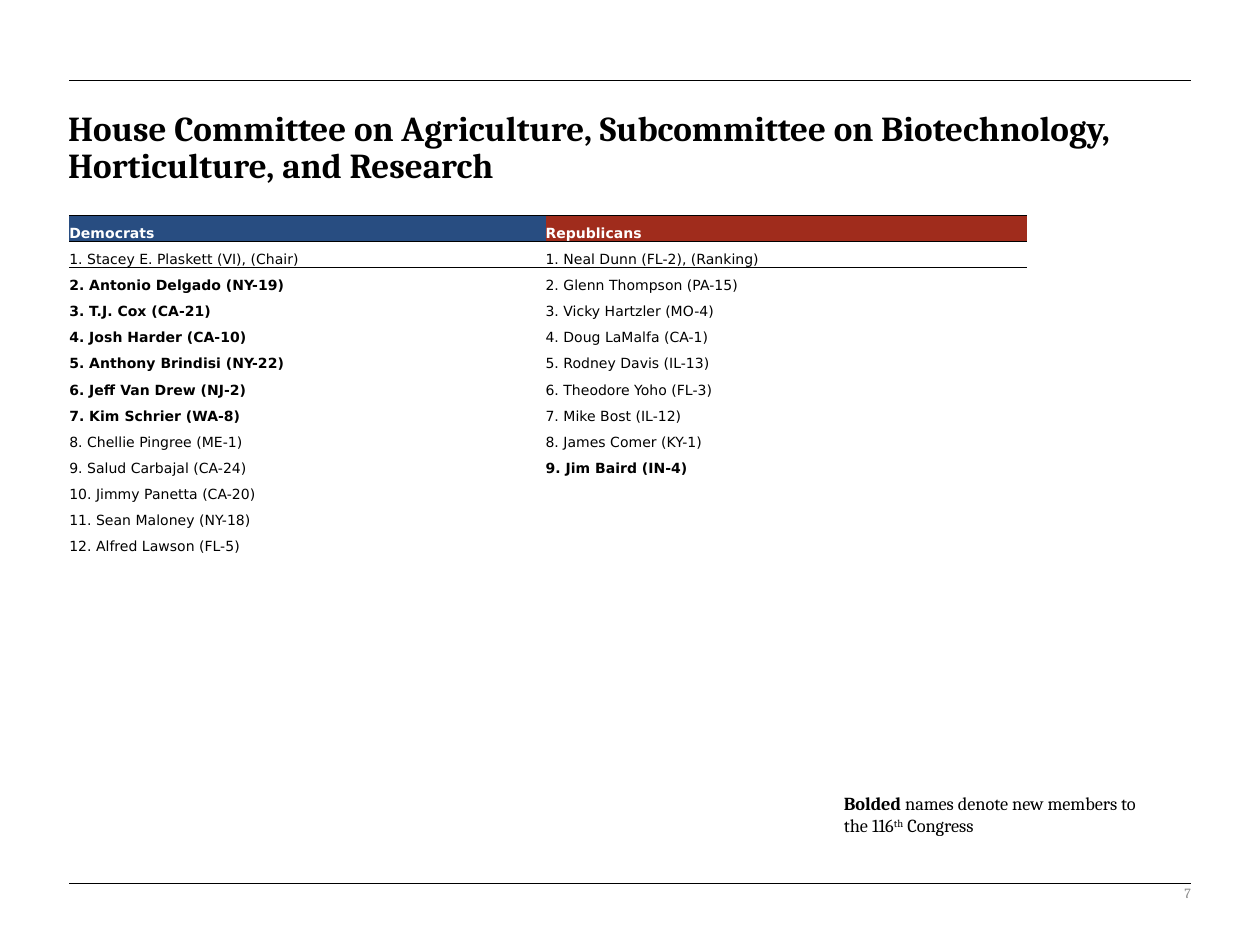
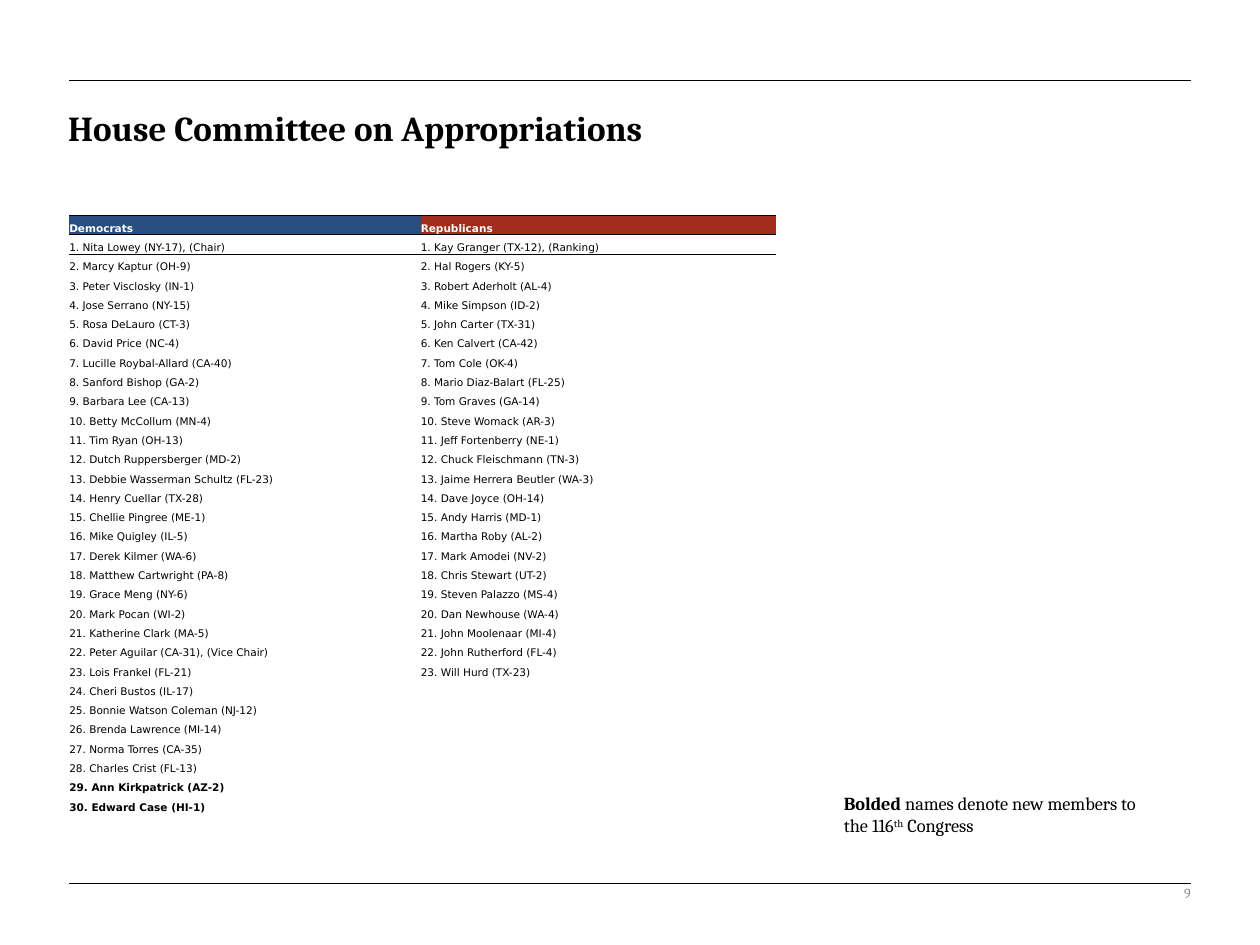
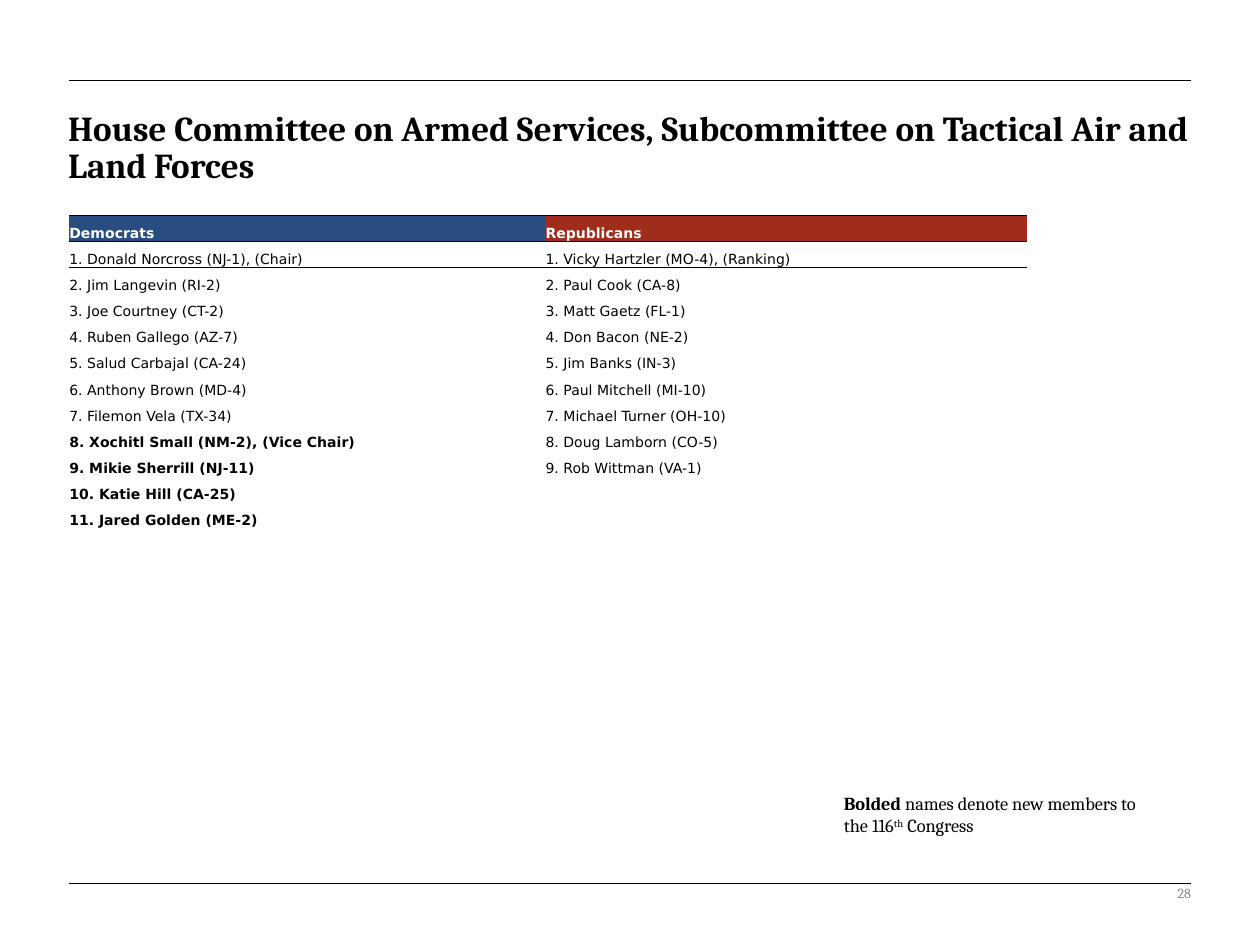
from dataclasses import dataclass

from lxml import etree
from pptx import Presentation
from pptx import util as u
from pptx.dml.color import RGBColor
from pptx.enum import shapes, text
from pptx.oxml.ns import qn

# Shared look
SERIF, SANS = "Cambria", "DejaVu Sans"
BLACK, WHITE, GRAY = "000000", "FFFFFF", "8C8C8C"
BLUE, RED = "284D81", "A02C1C"
HEADS = (("Democrats", BLUE), ("Republicans", RED))
PLAIN = "{2D5ABB26-0587-4C30-8999-92F81FD0307C}"
WIDE, HIGH = u.Inches(10), u.Inches(7.5)

# Places as percent of the slide: left, top, width, height
TITLE = (4.4, 11.07, 92, 9.33)
NOTE = (66, 83.2, 27, 6)
NUMBER = (70.6, 91.87, 24.9, 5.33)
RULES = (93.47, 8.53)
LEFT, RIGHT, TOP = 5.5, 94.5, 22.8


@dataclass
class Roster:
    """One committee; a star marks a new member."""
    page: int
    title: str
    dems: str
    reps: str
    cols: tuple[float, float] = (37.8, 38.2)
    size: float = 8
    pitch: float = 14.95


ROSTERS = [
    Roster(
        7,
        "House Committee on Agriculture, Subcommittee on Biotechnology, "
        "Horticulture, and Research",
        """Stacey E. Plaskett (VI), (Chair)
*Antonio Delgado (NY-19)
*T.J. Cox (CA-21)
*Josh Harder (CA-10)
*Anthony Brindisi (NY-22)
*Jeff Van Drew (NJ-2)
*Kim Schrier (WA-8)
Chellie Pingree (ME-1)
Salud Carbajal (CA-24)
Jimmy Panetta (CA-20)
Sean Maloney (NY-18)
Alfred Lawson (FL-5)""",
        """Neal Dunn (FL-2), (Ranking)
Glenn Thompson (PA-15)
Vicky Hartzler (MO-4)
Doug LaMalfa (CA-1)
Rodney Davis (IL-13)
Theodore Yoho (FL-3)
Mike Bost (IL-12)
James Comer (KY-1)
*Jim Baird (IN-4)"""),
    Roster(
        9,
        "House Committee on Appropriations",
        """Nita Lowey (NY-17), (Chair)
Marcy Kaptur (OH-9)
Peter Visclosky (IN-1)
Jose Serrano (NY-15)
Rosa DeLauro (CT-3)
David Price (NC-4)
Lucille Roybal-Allard (CA-40)
Sanford Bishop (GA-2)
Barbara Lee (CA-13)
Betty McCollum (MN-4)
Tim Ryan (OH-13)
Dutch Ruppersberger (MD-2)
Debbie Wasserman Schultz (FL-23)
Henry Cuellar (TX-28)
Chellie Pingree (ME-1)
Mike Quigley (IL-5)
Derek Kilmer (WA-6)
Matthew Cartwright (PA-8)
Grace Meng (NY-6)
Mark Pocan (WI-2)
Katherine Clark (MA-5)
Peter Aguilar (CA-31), (Vice Chair)
Lois Frankel (FL-21)
Cheri Bustos (IL-17)
Bonnie Watson Coleman (NJ-12)
Brenda Lawrence (MI-14)
Norma Torres (CA-35)
Charles Crist (FL-13)
*Ann Kirkpatrick (AZ-2)
*Edward Case (HI-1)""",
        """Kay Granger (TX-12), (Ranking)
Hal Rogers (KY-5)
Robert Aderholt (AL-4)
Mike Simpson (ID-2)
John Carter (TX-31)
Ken Calvert (CA-42)
Tom Cole (OK-4)
Mario Diaz-Balart (FL-25)
Tom Graves (GA-14)
Steve Womack (AR-3)
Jeff Fortenberry (NE-1)
Chuck Fleischmann (TN-3)
Jaime Herrera Beutler (WA-3)
Dave Joyce (OH-14)
Andy Harris (MD-1)
Martha Roby (AL-2)
Mark Amodei (NV-2)
Chris Stewart (UT-2)
Steven Palazzo (MS-4)
Dan Newhouse (WA-4)
John Moolenaar (MI-4)
John Rutherford (FL-4)
Will Hurd (TX-23)""",
        cols=(27.9, 28.2), size=6, pitch=11.05),
    Roster(
        28,
        "House Committee on Armed Services, Subcommittee on Tactical Air "
        "and Land Forces",
        """Donald Norcross (NJ-1), (Chair)
Jim Langevin (RI-2)
Joe Courtney (CT-2)
Ruben Gallego (AZ-7)
Salud Carbajal (CA-24)
Anthony Brown (MD-4)
Filemon Vela (TX-34)
*Xochitl Small (NM-2), (Vice Chair)
*Mikie Sherrill (NJ-11)
*Katie Hill (CA-25)
*Jared Golden (ME-2)""",
        """Vicky Hartzler (MO-4), (Ranking)
Paul Cook (CA-8)
Matt Gaetz (FL-1)
Don Bacon (NE-2)
Jim Banks (IN-3)
Paul Mitchell (MI-10)
Michael Turner (OH-10)
Doug Lamborn (CO-5)
Rob Wittman (VA-1)"""),
]


# Helpers
def across(part: float) -> int:
    return round(WIDE * part / 100)


def down(part: float) -> int:
    return round(HIGH * part / 100)


def area(spot: tuple) -> tuple:
    x, y, w, h = spot
    return across(x), down(y), across(w), down(h)


def paint(fill, tone: str) -> None:
    fill.solid()
    fill.fore_color.rgb = RGBColor.from_string(tone)


def put(para, words: str, *, size: float, face: str = SERIF,
        tone: str = BLACK, bold: bool = False, base: int = 0) -> None:
    """Add one run to a paragraph."""
    run = para.add_run()
    run.text = words
    font = run.font
    font.size, font.name, font.bold = u.Pt(size), face, bold
    paint(font.fill, tone)
    if base:
        font._element.set("baseline", str(base * 1000))


def edge(cell, *sides: str) -> None:
    props = cell._tc.get_or_add_tcPr()
    for side in sides:
        line = etree.SubElement(props, qn(f"a:ln{side}"), w=str(u.Pt(0.5)))
        fill = etree.SubElement(line, qn("a:solidFill"))
        etree.SubElement(fill, qn("a:srgbClr"), val=BLACK)


# Parts of a slide
def rule(slide, y: float) -> None:
    line = slide.shapes.add_connector(
        shapes.MSO_CONNECTOR.STRAIGHT,
        across(LEFT), down(y), across(RIGHT), down(y))
    paint(line.line.fill, BLACK)
    line.line.width = u.Pt(0.5)
    etree.SubElement(line._element.spPr, qn("a:effectLst"))


def label(slide, spot: tuple):
    frame = slide.shapes.add_textbox(*area(spot)).text_frame
    frame.word_wrap = True
    return frame


def number(slide, page: int) -> None:
    frame = label(slide, NUMBER)
    frame.vertical_anchor = text.MSO_ANCHOR.MIDDLE
    para = frame.paragraphs[0]
    para.alignment = text.PP_ALIGN.RIGHT
    put(para, str(page), size=8, tone=GRAY)


def head(slide, words: str) -> None:
    title = slide.shapes.title
    title.left, title.top, title.width, title.height = area(TITLE)
    frame = title.text_frame
    frame.auto_size = text.MSO_AUTO_SIZE.NONE
    frame.vertical_anchor = text.MSO_ANCHOR.TOP
    para = frame.paragraphs[0]
    para.alignment, para.line_spacing = text.PP_ALIGN.LEFT, 0.9
    put(para, words, size=20, bold=True)


def note(slide) -> None:
    frame = label(slide, NOTE)
    frame.auto_size = text.MSO_AUTO_SIZE.SHAPE_TO_FIT_TEXT
    para = frame.paragraphs[0]
    put(para, "Bolded ", size=10.5, bold=True)
    put(para, "names denote new members to the 116", size=10.5)
    put(para, "th", size=10.5, base=30)
    put(para, " Congress", size=10.5)


def grid(slide, data: Roster) -> None:
    sides = [data.dems.splitlines(), data.reps.splitlines()]
    count = 1 + max(map(len, sides))
    pitch = u.Pt(data.pitch)
    shape = slide.shapes.add_table(
        count, 2, across(LEFT), down(TOP), across(sum(data.cols)),
        pitch * count)
    for style in shape._element.iter(qn("a:tableStyleId")):
        style.text = PLAIN
    table = shape.table
    table.first_row = table.horz_banding = False
    for row in table.rows:
        row.height = pitch
    for col, (names, (party, tone)) in enumerate(zip(sides, HEADS)):
        table.columns[col].width = across(data.cols[col])
        for row in range(count):
            cell = table.cell(row, col)
            cell.margin_left = cell.margin_right = 0
            cell.margin_top = cell.margin_bottom = 0
            cell.vertical_anchor = text.MSO_ANCHOR.BOTTOM
            para = cell.text_frame.paragraphs[0]
            if row == 0:
                edge(cell, "T", "B")
                paint(cell.fill, tone)
                put(para, party, size=data.size, face=SANS, tone=WHITE,
                    bold=True)
                continue
            if row == 1:
                edge(cell, "T")
            cell.fill.background()
            if row <= len(names):
                name = names[row - 1]
                put(para, f"{row}. {name.lstrip('*')}", size=data.size,
                    face=SANS, bold=name.startswith("*"))
            else:
                # Keep empty cells from stretching their row
                etree.SubElement(para._p, qn("a:endParaRPr"),
                                 sz=str(round(data.size * 100)))


def main() -> None:
    deck = Presentation()
    deck.slide_width, deck.slide_height = WIDE, HIGH
    for data in ROSTERS:
        slide = deck.slides.add_slide(deck.slide_layouts[5])
        for y in RULES:
            rule(slide, y)
        number(slide, data.page)
        head(slide, data.title)
        note(slide)
        grid(slide, data)
    deck.save("out.pptx")


if __name__ == "__main__":
    main()
